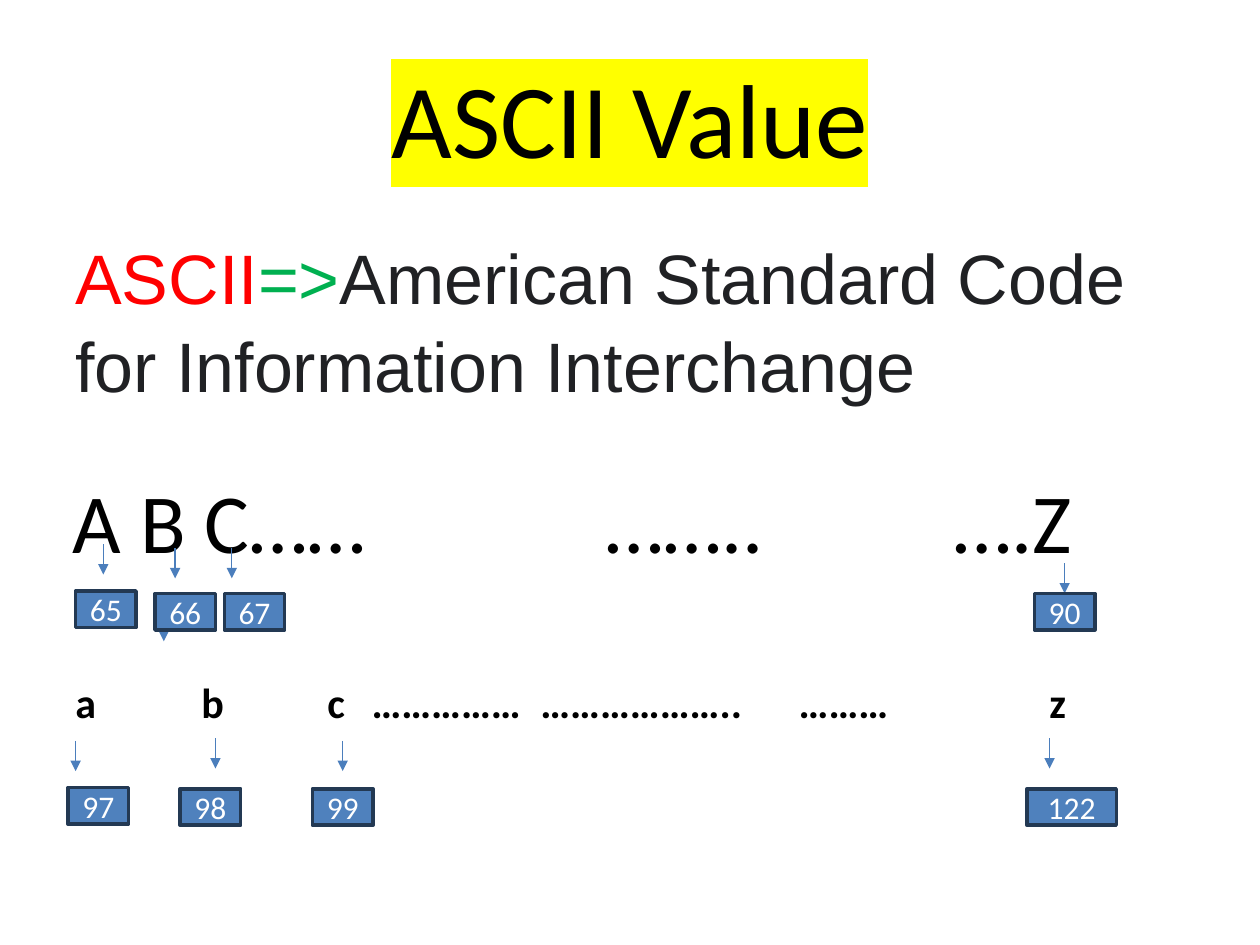
from dataclasses import dataclass

from lxml import etree
from pptx import Presentation
from pptx import util as u
from pptx.dml.color import RGBColor
from pptx.enum import shapes, text
from pptx.oxml import ns


@dataclass(frozen=True)
class Theme:
    body_font: str = "Calibri"
    definition_font: str = "Arial"
    black: str = "000000"
    white: str = "FFFFFF"
    red: str = "FF0000"
    green: str = "00B050"
    charcoal: str = "202124"
    highlight: str = "FFFF00"
    box_fill: str = "4F81BD"
    box_line: str = "233953"
    arrow: str = "4B7EBC"
    title_size: int = 60
    upper_size: int = 48
    definition_size: int = 40
    lower_size: int = 24
    code_size: int = 18


class Painter:
    def __init__(self, page, theme):
        self.page = page
        self.theme = theme

    def format_span(self, span, size, color, font=None, bold=False):
        span.font.size = u.Pt(size)
        span.font.name = font or self.theme.body_font
        span.font.bold = bold
        span.font.color.rgb = RGBColor.from_string(color)

    def text_box(self, left, top, width, height):
        box = self.page.shapes.add_textbox(*map(u.Inches, (left, top, width, height)))
        box.text_frame.word_wrap = True
        return box.text_frame

    def title(self, wording):
        frame = self.text_box(0.5, 0.3, 9, 1.25)
        frame.vertical_anchor = text.MSO_ANCHOR.MIDDLE
        frame.text = wording
        para = frame.paragraphs[0]
        para.alignment = text.PP_ALIGN.CENTER
        span = para.runs[0]
        self.format_span(span, self.theme.title_size, self.theme.black)
        mark = etree.Element(ns.qn("a:highlight"))
        etree.SubElement(mark, ns.qn("a:srgbClr"), val=self.theme.highlight)
        span.font._element.find(ns.qn("a:solidFill")).addnext(mark)

    def definition(self, parts):
        para = self.text_box(0.5, 1.78, 9, 4.95).paragraphs[0]
        para.line_spacing = 1.05
        for wording, color in parts:
            span = para.add_run()
            span.text = wording
            self.format_span(span, self.theme.definition_size, color,
                             self.theme.definition_font)

    def letter_row(self, frame, pieces, stops, size, bold=False):
        """Write the pieces on one line, each after the first at its tab stop."""
        frame.text = "\t".join(pieces)
        para = frame.paragraphs[0]
        tabs = etree.SubElement(para._p.get_or_add_pPr(), ns.qn("a:tabLst"))
        for stop in stops:
            etree.SubElement(tabs, ns.qn("a:tab"), pos=str(u.Inches(stop)), algn="l")
        for span in para.runs:
            self.format_span(span, size, self.theme.black, bold=bold)

    def down_arrow(self, x, top, length=0.24):
        line = self.page.shapes.add_connector(
            shapes.MSO_CONNECTOR.STRAIGHT,
            *map(u.Inches, (x, top, x, top + length)))
        line.line.width = u.Pt(0.75)
        line.line.color.rgb = RGBColor.from_string(self.theme.arrow)
        etree.SubElement(line.line._get_or_add_ln(), ns.qn("a:tailEnd"), type="triangle")
        etree.SubElement(line._element.spPr, ns.qn("a:effectLst"))

    def code_box(self, code, left, top, width=0.48):
        box = self.page.shapes.add_shape(
            shapes.MSO_SHAPE.RECTANGLE, *map(u.Inches, (left, top, width, 0.29)))
        box.shadow.inherit = False
        box.fill.solid()
        box.fill.fore_color.rgb = RGBColor.from_string(self.theme.box_fill)
        box.line.color.rgb = RGBColor.from_string(self.theme.box_line)
        box.line.width = u.Pt(2)
        frame = box.text_frame
        frame.vertical_anchor = text.MSO_ANCHOR.MIDDLE
        frame.text = str(code)
        para = frame.paragraphs[0]
        para.alignment = text.PP_ALIGN.CENTER
        self.format_span(para.runs[0], self.theme.code_size, self.theme.white)


def main():
    deck = Presentation()
    deck.slide_width, deck.slide_height = u.Inches(10), u.Inches(7.5)
    theme = Theme()
    painter = Painter(deck.slides.add_slide(deck.slide_layouts[6]), theme)

    painter.title("ASCII Value")
    upper = painter.text_box(0.48, 1.78, 9, 4.95)
    upper.margin_top = u.Inches(1.95)
    painter.letter_row(upper, ["A B C……", "……..", "….Z"], [4.23, 6.99],
                       theme.upper_size)
    painter.definition([
        ("ASCII", theme.red),
        ("=>", theme.green),
        ("American Standard Code for Information Interchange", theme.charcoal),
    ])
    painter.letter_row(
        painter.text_box(0.5, 5.32, 8.52, 1.31),
        ["a", "b", "c", "……………", "………………..", "………", "z"],
        [1, 2, 2.35, 3.69, 5.74, 7.73], theme.lower_size, bold=True)

    upper_arrows = [(0.82, 4.32), (1.3, 4.85), (1.39, 4.35), (1.84, 4.35), (8.45, 4.47)]
    lower_arrows = [(0.6, 5.88), (1.71, 5.86), (2.72, 5.88), (8.33, 5.86)]
    for x, top in upper_arrows + lower_arrows:
        painter.down_arrow(x, top)

    upper_codes = [("A", 0.6, 4.69), ("B", 1.23, 4.71), ("C", 1.78, 4.71), ("Z", 8.21, 4.71)]
    lower_codes = [("a", 0.54, 6.25), ("b", 1.43, 6.26), ("c", 2.48, 6.26)]
    for letter, left, top in upper_codes + lower_codes:
        painter.code_box(ord(letter), left, top)
    painter.code_box(ord("z"), 8.15, 6.26, width=0.71)

    deck.save("out.pptx")


if __name__ == "__main__":
    main()
